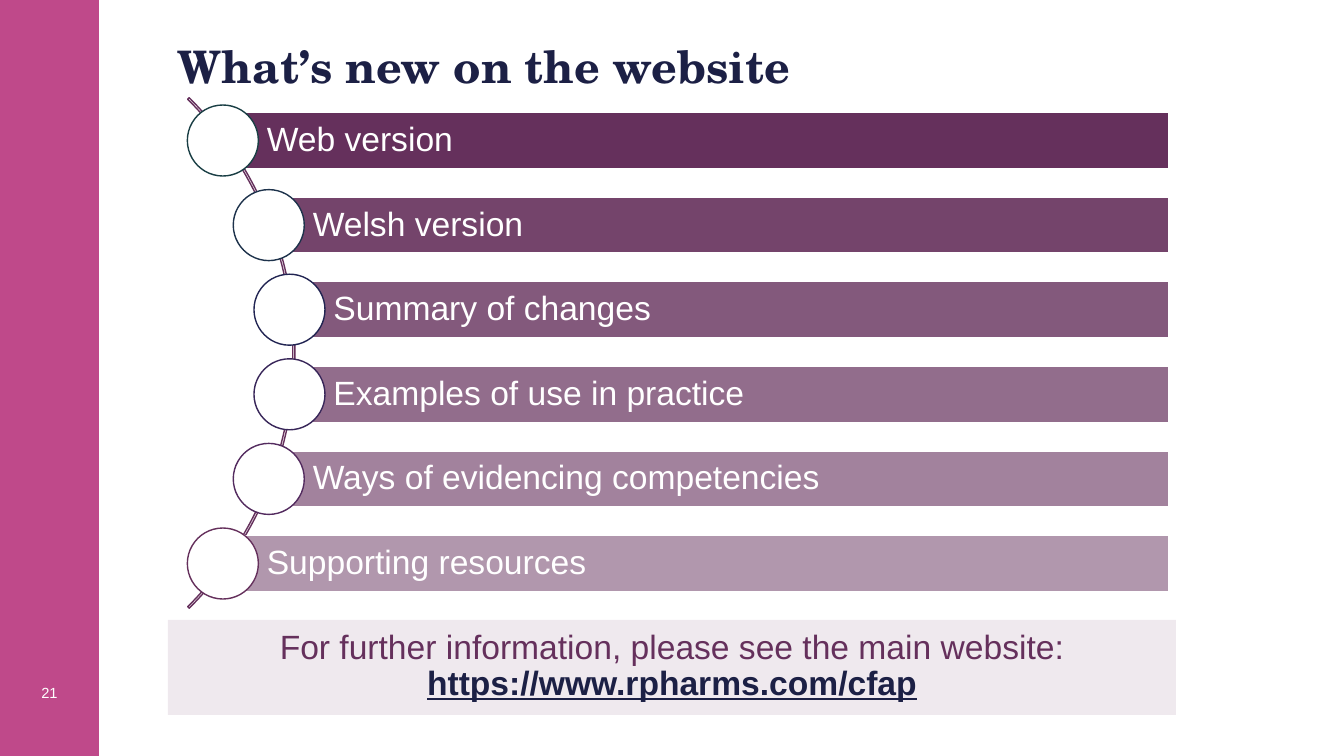
"""Build the slide that lists what is new on the website."""
import math
from dataclasses import dataclass

from lxml import etree
from pptx import Presentation
from pptx import util as u
from pptx.dml.color import RGBColor
from pptx.enum import shapes, text
from pptx.oxml.ns import qn

EMU_PER_PX = 914400 / 100.8
ARC_CENTRE = (-66, 353)
ARC_SIZE = 722
ORBIT_RADIUS = 358
ROW_PITCH = 84.6
BAR_HEIGHT = 56
BAR_RIGHT = 1169
CIRCLE_SIZE = 71


@dataclass(frozen=True)
class Theme:
    """Colours, fonts and type sizes of the slide."""
    pink: str = "BF498A"
    plum: str = "65305C"
    navy: str = "1C2045"
    white: str = "FFFFFF"
    body_font: str = "Arial"
    title_font: str = "TeX Gyre Schola"
    title_size: float = 32
    body_size: float = 24
    number_size: float = 10.5


THEME = Theme()

ROWS = [
    ("Web version", "193E44"),
    ("Welsh version", "1D324B"),
    ("Summary of changes", "212452"),
    ("Examples of use in practice", "382659"),
    ("Ways of evidencing competencies", "532B5F"),
    ("Supporting resources", THEME.plum),
]


def px(length):
    """Turn pixels into EMU."""
    return u.Emu(round(length * EMU_PER_PX))


def add_block(page, preset, left, top, width, height, fill=None, alpha=100, line=None):
    """Add a preset shape with its fill, opacity in percent and outline."""
    block = page.shapes.add_shape(preset, px(left), px(top), px(width), px(height))
    block.shadow.inherit = False
    if fill:
        block.fill.solid()
        block.fill.fore_color.rgb = RGBColor.from_string(fill)
        if alpha < 100:
            colour = block.fill._xPr.find(qn("a:solidFill"))[0]
            etree.SubElement(colour, qn("a:alpha")).set("val", str(alpha * 1000))
    else:
        block.fill.background()
    if line:
        block.line.color.rgb = RGBColor.from_string(line)
        block.line.width = u.Pt(1)
    else:
        block.line.fill.background()
    return block


def add_box(page, left, top, width, height):
    """Add an empty text box."""
    return page.shapes.add_textbox(px(left), px(top), px(width), px(height))


def write(box, *spans, size=THEME.body_size, font=THEME.body_font,
          align=text.PP_ALIGN.LEFT, anchor=text.MSO_ANCHOR.TOP,
          margins=(10, 5, 10, 5), spacing=0.9):
    """Write one paragraph of (wording, colour, bold, underline) spans."""
    frame = box.text_frame
    frame.word_wrap = True
    frame.vertical_anchor = anchor
    (frame.margin_left, frame.margin_top,
     frame.margin_right, frame.margin_bottom) = map(px, margins)
    para = frame.paragraphs[0]
    para.alignment = align
    para.line_spacing = spacing
    for wording, colour, bold, underline in spans:
        span = para.add_run()
        span.text = wording
        span.font.name = font
        span.font.size = u.Pt(size)
        span.font.bold = bold
        span.font.underline = underline
        span.font.color.rgb = RGBColor.from_string(colour)


def add_sidebar(page):
    """Add the pink side band with the slide number."""
    add_block(page, shapes.MSO_SHAPE.RECTANGLE, 0, 0, 99, 756, THEME.pink)
    write(add_box(page, -1, 679, 101, 29), ("21", THEME.white, False, False),
          size=THEME.number_size, align=text.PP_ALIGN.CENTER, spacing=1.0)


def add_arc(page):
    """Add the thin arc that runs behind the circles."""
    left, top = (centre - ARC_SIZE / 2 for centre in ARC_CENTRE)
    arc = add_block(page, shapes.MSO_SHAPE.BLOCK_ARC, left, top,
                    ARC_SIZE, ARC_SIZE, line=THEME.plum)
    for index, value in enumerate((189, 27, 0.003)):
        arc.adjustments[index] = value


def add_row(page, index, wording, outline):
    """Add one bar and its circle, placed along the arc."""
    offset = (index - (len(ROWS) - 1) / 2) * ROW_PITCH
    middle_x = ARC_CENTRE[0] + math.sqrt(ORBIT_RADIUS ** 2 - offset ** 2)
    middle_y = ARC_CENTRE[1] + offset - 1
    bar = add_block(page, shapes.MSO_SHAPE.RECTANGLE, middle_x,
                    middle_y - BAR_HEIGHT / 2, BAR_RIGHT - middle_x, BAR_HEIGHT,
                    THEME.plum, 100 - 10 * index, THEME.white)
    write(bar, (wording, THEME.white, False, False),
          anchor=text.MSO_ANCHOR.MIDDLE, margins=(44, 7, 7, 7))
    add_block(page, shapes.MSO_SHAPE.OVAL, middle_x - CIRCLE_SIZE / 2,
              middle_y - CIRCLE_SIZE / 2, CIRCLE_SIZE, CIRCLE_SIZE,
              THEME.white, line=outline)


def add_footer(page):
    """Add the pale panel with the web address."""
    panel = add_block(page, shapes.MSO_SHAPE.RECTANGLE, 168, 620, 1008, 95,
                      THEME.plum, 10)
    write(panel,
          ("For further information, please see the main website: ",
           THEME.plum, False, False),
          ("https://www.rpharms.com/cfap", THEME.navy, True, True),
          align=text.PP_ALIGN.CENTER, margins=(10, 10, 10, 10))


def main():
    """Build and save the deck."""
    deck = Presentation()
    deck.slide_width, deck.slide_height = px(1344), px(756)
    page = deck.slides.add_slide(deck.slide_layouts[6])
    add_sidebar(page)
    add_arc(page)
    for index, (wording, outline) in enumerate(ROWS):
        add_row(page, index, wording, outline)
    write(add_box(page, 168, 40, 982, 43),
          ("What’s new on the website", THEME.navy, True, False),
          size=THEME.title_size, font=THEME.title_font)
    add_footer(page)
    deck.save("out.pptx")


if __name__ == "__main__":
    main()
